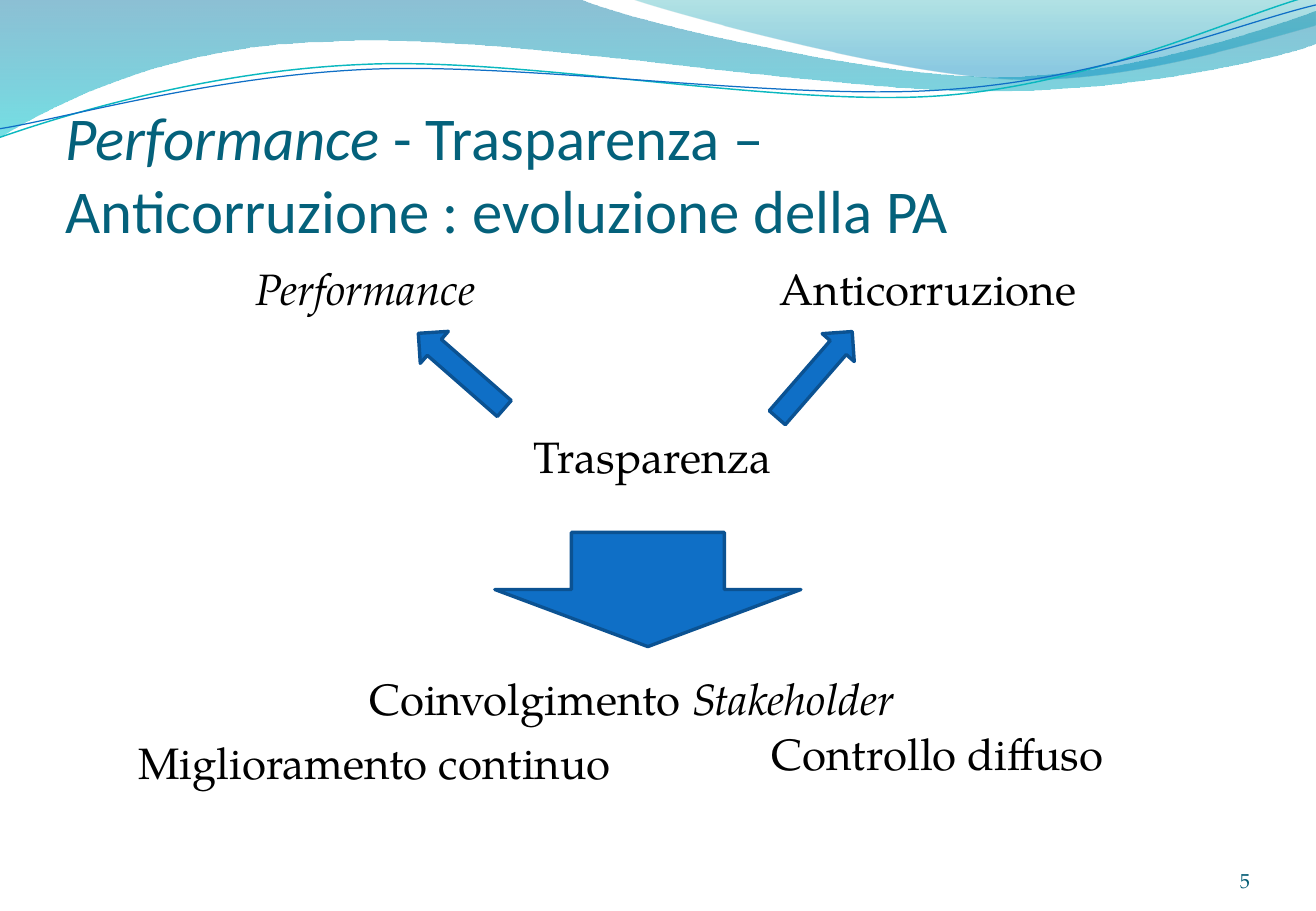
from lxml import etree
from pptx import Presentation
from pptx import util as u
from pptx.dml.color import RGBColor
from pptx.enum import shapes, text
from pptx.oxml.ns import qn

COLORS = {
    "title": "04617B", "body": "000000", "number": "045D75",
    "arrow": "0F6FC6", "arrow_edge": "0B5292",
    "teal_line": "0AB8BF", "blue_line": "0F6FC6",
    "wave_blue": "0074A1", "wave_aqua": "00C6CF",
    "crest_teal": "00A1A9", "crest_blue": "008BBF",
}
HEADING, BODY = "Calibri", "TeX Gyre Pagella"


def rgb(name):
    return RGBColor.from_string(COLORS[name])


def write(paragraph, content, *, font=BODY, size=26, color="body", italic=False):
    """Add text as one formatted run."""
    run = paragraph.add_run()
    run.text = content
    run.font.name, run.font.size = font, u.Pt(size)
    run.font.italic = italic
    run.font.color.rgb = rgb(color)


class SlideBuilder:
    def __init__(self, presentation):
        self.slide = presentation.slides.add_slide(presentation.slide_layouts[6])
        self.shapes = self.slide.shapes

    def outline(self, start, segments, close):
        """Draw lines (2 numbers) and cubic curves (6 numbers)."""
        points = [(u.Pt(x), u.Pt(y)) for segment in segments
                  for x, y in zip(segment[::2], segment[1::2])]
        builder = self.shapes.build_freeform(*map(u.Pt, start), scale=1.0)
        builder.add_line_segments(points, close=close)
        shape = builder.convert_to_shape()
        shape.shadow.inherit = False
        # Join each three points of a curve into one cubic element
        lines = iter(list(shape.element.iter(qn("a:lnTo"))))
        for segment in segments:
            first = next(lines)
            if len(segment) == 6:
                first.tag = qn("a:cubicBezTo")
                for extra in (next(lines), next(lines)):
                    first.append(extra[0])
                    extra.getparent().remove(extra)
        return shape

    def wave(self, start, segments, stops):
        shape = self.outline(start, segments, True)
        shape.line.fill.background()
        shape.fill.gradient()
        shape.fill.gradient_angle = 270
        for stop, (position, color, _) in zip(shape.fill.gradient_stops, stops):
            stop.position, stop.color.rgb = position, rgb(color)
        gradient = shape.element.spPr.find(qn("a:gradFill"))
        for node, (_, _, opacity) in zip(gradient.iter(qn("a:srgbClr")), stops):
            etree.SubElement(node, qn("a:alpha"), val=str(opacity * 1000))

    def wave_line(self, start, segments, color, width):
        shape = self.outline(start, segments, False)
        shape.fill.background()
        shape.line.color.rgb, shape.line.width = rgb(color), u.Pt(width)

    def arrow(self, left, top, width, height, rotation=0):
        shape = self.shapes.add_shape(shapes.MSO_SHAPE.DOWN_ARROW,
                                      *map(u.Pt, (left, top, width, height)))
        shape.rotation = rotation
        shape.shadow.inherit = False
        shape.fill.solid()
        shape.fill.fore_color.rgb = rgb("arrow")
        shape.line.color.rgb, shape.line.width = rgb("arrow_edge"), u.Pt(2)

    def text_box(self, left, top, width, height, runs, *, insets=(7.2, 3.6, 7.2, 3.6),
                 anchor=text.MSO_ANCHOR.TOP, align=text.PP_ALIGN.LEFT, **style):
        box = self.shapes.add_textbox(*map(u.Pt, (left, top, width, height)))
        frame = box.text_frame
        frame.word_wrap, frame.vertical_anchor = True, anchor
        (frame.margin_left, frame.margin_top,
         frame.margin_right, frame.margin_bottom) = map(u.Pt, insets)
        paragraph = frame.paragraphs[0]
        paragraph.alignment = align
        for content, italic in runs:
            write(paragraph, content, italic=italic, **style)


def main():
    presentation = Presentation()
    presentation.slide_width, presentation.slide_height = u.Pt(780), u.Pt(540)
    page = SlideBuilder(presentation)

    # Waves across the top
    page.wave((0, 0), [
        (343.4, -0.7),
        (370.8, 12.2, 517.7, 45.4, 591.8, 45.4), (665.3, 45.4, 747.4, 18.7, 780, 6.5),
        (780.5, 25.9),
        (766.8, 31.7, 678.2, 54.7, 581.8, 54), (485.3, 54, 298.1, 20.2, 200.9, 24.5),
        (100.8, 25.9, 36, 59.8, -0.7, 81.4),
    ], [(0, "wave_blue", 45), (1, "wave_aqua", 55)])
    page.wave((373.7, -0.7), [
        (397.4, 7.9, 532.1, 44.6, 599.8, 46.8), (667.4, 49.7, 750.2, 23, 780, 15.1),
        (780, 0),
    ], [(0, "crest_teal", 30), (0.8, "crest_blue", 45)])
    page.wave_line((0, 81.4), [
        (37.4, 68.4, 123.1, 41.8, 216, 38.2), (308.2, 33.8, 462.2, 63.4, 555.8, 56.9),
        (649.4, 50.4, 732.2, 9.4, 778.3, -2.9),
    ], "teal_line", 0.85)
    page.wave_line((0, 76.3), [
        (36.7, 70.6, 127.4, 44.6, 221, 41), (313.9, 37.4, 465.8, 59.8, 558.7, 53.3),
        (652.3, 47.5, 734.4, 13.7, 780, 2.9),
    ], "blue_line", 0.75)

    # Title and slide number
    page.text_box(38.9, 55.4, 545, 90,
                  [("Performance", True),
                   (" - Trasparenza –Anticorruzione : evoluzione della PA", False)],
                  insets=(0, 3.6, 0, 0), anchor=text.MSO_ANCHOR.BOTTOM,
                  font=HEADING, size=36, color="title")
    page.text_box(676.1, 500.4, 64.8, 28.8, [("5", False)], insets=(0, 0, 0, 0),
                  anchor=text.MSO_ANCHOR.BOTTOM, align=text.PP_ALIGN.RIGHT,
                  size=12, color="number")

    # Arrows from transparency to the other themes
    page.arrow(293.3, 315.6, 181.4, 67.7)
    page.arrow(260.8, 186, 25.2, 67.7, 131.2)
    page.arrow(470.3, 188.2, 25.2, 67.7, 221)

    # Themes and outcomes
    for left, top, width, height, runs in [
        (144.4, 151.7, 167, 46.8, [("Performance", True)]),
        (455, 151.7, 209.5, 46.8, [("Anticorruzione", False)]),
        (309.4, 250.9, 185.8, 46.8, [("Trasparenza", False)]),
        (211.7, 394.6, 344.2, 40.3, [("Coinvolgimento ", False), ("Stakeholder", True)]),
        (74.9, 432.7, 295.9, 38.9, [("Miglioramento continuo", False)]),
        (450, 427, 219.6, 38.9, [("Controllo diffuso", False)]),
    ]:
        page.text_box(left, top, width, height, runs)

    presentation.save("out.pptx")


if __name__ == "__main__":
    main()
